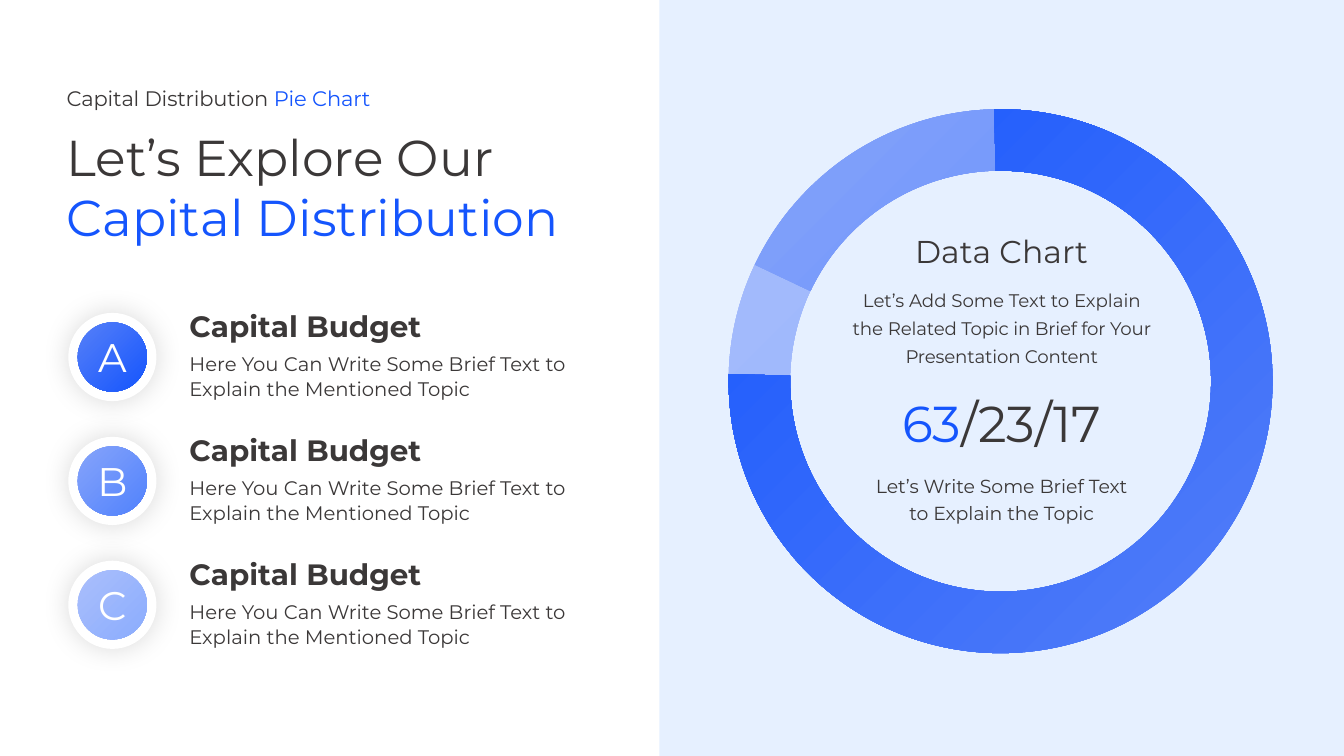
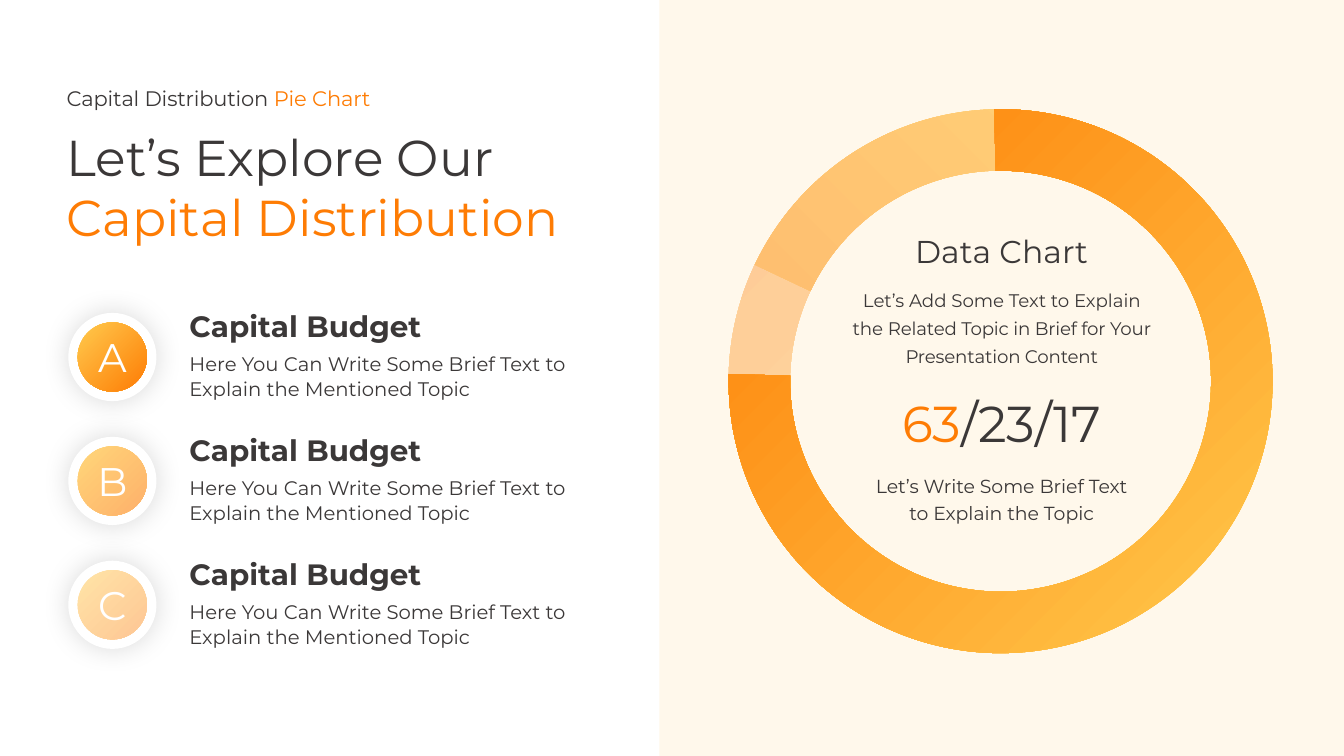
from dataclasses import dataclass
from typing import Optional, Union

from lxml.etree import SubElement
from pptx import Presentation
from pptx.dml.color import RGBColor as Rgb
from pptx.enum.shapes import MSO_SHAPE as Preset
from pptx.enum.text import MSO_AUTO_SIZE as AutoSize, PP_ALIGN as Align
from pptx.oxml.ns import qn
from pptx.util import Emu, Pt

PX = 9525
WIDTH, HEIGHT = 1280, 720
FONT = "Montserrat"
COLORS = {
    "white": "FFFFFF",
    "black": "000000",
    "ink": "3B3838",
    "ice": "E6F0FF",
    "blue": "1555FD",
    "blue_end": "5680F8",
    "sky": "5182FD",
    "sky_end": "86A4FA",
    "mist": "8BACFD",
    "mist_end": "AABFFC",
    "cream": "FFF5EB",
    "cream_end": "FFF8EB",
    "orange": "FE7C04",
    "orange_end": "FFCA4E",
    "apricot": "FEB06A",
    "apricot_end": "FFD679",
    "peach": "FEC694",
    "peach_end": "FFE4A7",
}
Corner = tuple[int, int]
TOP_LEFT: Corner = (0, 0)
TOP_RIGHT: Corner = (100, 0)
BOTTOM_LEFT: Corner = (0, 100)
BOTTOM_RIGHT: Corner = (100, 100)


@dataclass(frozen=True)
class Box:
    left: int
    top: int
    width: int
    height: int

    def emu(self) -> list[Emu]:
        return [Emu(n * PX) for n in (self.left, self.top, self.width, self.height)]


@dataclass(frozen=True)
class Gradient:
    start: str
    end: str
    focus: Optional[Corner] = None


Paint = Union[str, Gradient]


@dataclass(frozen=True)
class Theme:
    panel: Paint
    tones: tuple[str, str, str]
    arc_focus: tuple[Corner, Corner, Corner]


@dataclass(frozen=True)
class Span:
    text: str
    accent: bool = False
    tight: bool = False


@dataclass(frozen=True)
class Label:
    box: Box
    size: float
    lines: tuple[tuple[Span, ...], ...]
    align: Align = Align.LEFT
    leading: Optional[int] = None
    bold: bool = False
    color: str = "ink"


@dataclass(frozen=True)
class Arc:
    start: float
    rotation: float


THEMES = (
    Theme("ice", ("blue", "sky", "mist"), (TOP_LEFT, BOTTOM_RIGHT, BOTTOM_RIGHT)),
    Theme(
        Gradient("cream", "cream_end", TOP_RIGHT),
        ("orange", "apricot", "peach"),
        (TOP_LEFT, BOTTOM_LEFT, TOP_LEFT),
    ),
)
PANEL = Box(628, 0, WIDTH - 628, HEIGHT)
RING = Box(694, 104, 518, 518)
RING_CENTER = 954
ARCS = (Arc(355.95, 272.7), Arc(205.36, 0), Arc(243.39, 296.9))
ARC_END = 268.8
ARC_THICKNESS = 0.11
ITEM_TOP, ITEM_PITCH = 298, 118
HALO_LEFT, HALO, DISC = 65, 84, 66


def centered(
    top: int, width: int, height: int, size: float,
    *lines: tuple[Span, ...], leading: Optional[int] = None,
) -> Label:
    box = Box(RING_CENTER - width // 2, top, width, height)
    return Label(box, size, lines, Align.CENTER, leading)


HEADER = (
    Label(Box(54, 77, 310, 34), 15, (
        (Span("Capital Distribution ", tight=True), Span("Pie Chart", True, True)),
    )),
    Label(Box(54, 115, 526, 126), 36, (
        (Span("Let’s Explore Our"),),
        (Span("Capital Distribution", True),),
    )),
)
RING_TEXT = (
    centered(216, 194, 46, 22.5, (Span("Data Chart"),)),
    centered(
        265, 312, 88, 13,
        (Span("Let’s Add Some Text to Explain"),),
        (Span("the "), Span("Related Topic in Brief for Your", tight=True)),
        (Span("Presentation Content", tight=True),),
        leading=20,
    ),
    centered(369, 230, 68, 36, (Span("63", True), Span("/23/17"))),
    centered(
        444, 278, 60, 13.5,
        (Span("Let’s Write Some Brief Text"),),
        (Span("to Explain the Topic"),),
        leading=19,
    ),
)


def rgb(name: str) -> Rgb:
    return Rgb.from_string(COLORS[name])


def tone_gradient(tone: str, focus: Optional[Corner] = None) -> Gradient:
    return Gradient(tone, f"{tone}_end", focus)


def apply_paint(fill, holder, paint: Paint) -> None:
    fill.solid()
    if isinstance(paint, str):
        fill.fore_color.rgb = rgb(paint)
        return
    solid = holder.find(qn("a:solidFill"))
    grad = SubElement(holder, qn("a:gradFill"), rotWithShape="1")
    stops = SubElement(grad, qn("a:gsLst"))
    for position, name in ((0, paint.start), (100000, paint.end)):
        stop = SubElement(stops, qn("a:gs"), pos=str(position))
        SubElement(stop, qn("a:srgbClr"), val=COLORS[name])
    if paint.focus is None:
        SubElement(grad, qn("a:lin"), ang="10800000", scaled="1")
    else:
        x, y = paint.focus
        sides = {"l": x, "t": y, "r": 100 - x, "b": 100 - y}
        circle = SubElement(grad, qn("a:path"), path="circle")
        SubElement(circle, qn("a:fillToRect"),
                   {side: str(value * 1000) for side, value in sides.items()})
    holder.replace(solid, grad)


def add_figure(slide, preset: Preset, box: Box, paint: Paint):
    figure = slide.shapes.add_shape(preset, *box.emu())
    figure.shadow.inherit = False
    figure.line.fill.background()
    apply_paint(figure.fill, figure._element.spPr, paint)
    return figure


def add_glow(figure) -> None:
    effects = figure._element.spPr.find(qn("a:effectLst"))
    glow = SubElement(effects, qn("a:outerShdw"), blurRad=str(Pt(20)),
                      dist="0", dir="0", algn="ctr", rotWithShape="0")
    color = SubElement(glow, qn("a:srgbClr"), val=COLORS["black"])
    SubElement(color, qn("a:alpha"), val="15000")


def add_label(slide, label: Label, accent: str) -> None:
    frame = slide.shapes.add_textbox(*label.box.emu()).text_frame
    frame.word_wrap = False
    frame.auto_size = AutoSize.SHAPE_TO_FIT_TEXT
    for index, spans in enumerate(label.lines):
        paragraph = frame.add_paragraph() if index else frame.paragraphs[0]
        paragraph.text = spans[0].text
        for span in spans[1:]:
            paragraph.add_run().text = span.text
        paragraph.alignment = label.align
        if label.leading:
            paragraph.line_spacing = Pt(label.leading)
        for run, span in zip(paragraph.runs, spans):
            run.font.name = FONT
            run.font.size = Pt(label.size)
            run.font.bold = label.bold
            properties = run._r.get_or_add_rPr()
            if span.tight:
                properties.set("spc", "-10")
            paint = tone_gradient(accent) if span.accent else label.color
            apply_paint(run.font.fill, properties, paint)


def add_ring(slide, theme: Theme) -> None:
    for arc, tone, focus in reversed(list(zip(ARCS, theme.tones, theme.arc_focus))):
        segment = add_figure(slide, Preset.BLOCK_ARC, RING, tone_gradient(tone, focus))
        segment.rotation = arc.rotation
        segment.adjustments[0] = arc.start * 0.6
        segment.adjustments[1] = ARC_END * 0.6
        segment.adjustments[2] = ARC_THICKNESS + 0.003


def add_item(slide, letter: str, tone: str, top: int, accent: str) -> None:
    inset = (HALO - DISC) // 2
    halo = add_figure(slide, Preset.OVAL, Box(HALO_LEFT, top, HALO, HALO), "white")
    add_glow(halo)
    disc = Box(HALO_LEFT + inset, top + inset, DISC, DISC)
    add_figure(slide, Preset.OVAL, disc, tone_gradient(tone, BOTTOM_RIGHT))
    labels = (
        Label(Box(82, top + 14, 50, 56), 28.5, ((Span(letter),),),
              Align.CENTER, color="white"),
        Label(Box(171, top - 9, 243, 43), 21, ((Span("Capital Budget"),),), bold=True),
        Label(Box(171, top + 31, 388, 57), 14, (
            (Span("Here You Can Write Some Brief Text to"),),
            (Span("Explain the Mentioned Topic"),),
        ), leading=18),
    )
    for label in labels:
        add_label(slide, label, accent)


def add_distribution_slide(deck, theme: Theme) -> None:
    slide = deck.slides.add_slide(deck.slide_layouts[6])
    accent = theme.tones[0]
    add_figure(slide, Preset.RECTANGLE, PANEL, theme.panel)
    add_ring(slide, theme)
    for label in HEADER + RING_TEXT:
        add_label(slide, label, accent)
    for index, (letter, tone) in enumerate(zip("ABC", theme.tones)):
        add_item(slide, letter, tone, ITEM_TOP + index * ITEM_PITCH, accent)


def main() -> None:
    deck = Presentation()
    deck.slide_width, deck.slide_height = Emu(WIDTH * PX), Emu(HEIGHT * PX)
    for theme in THEMES:
        add_distribution_slide(deck, theme)
    deck.save("out.pptx")


if __name__ == "__main__":
    main()
